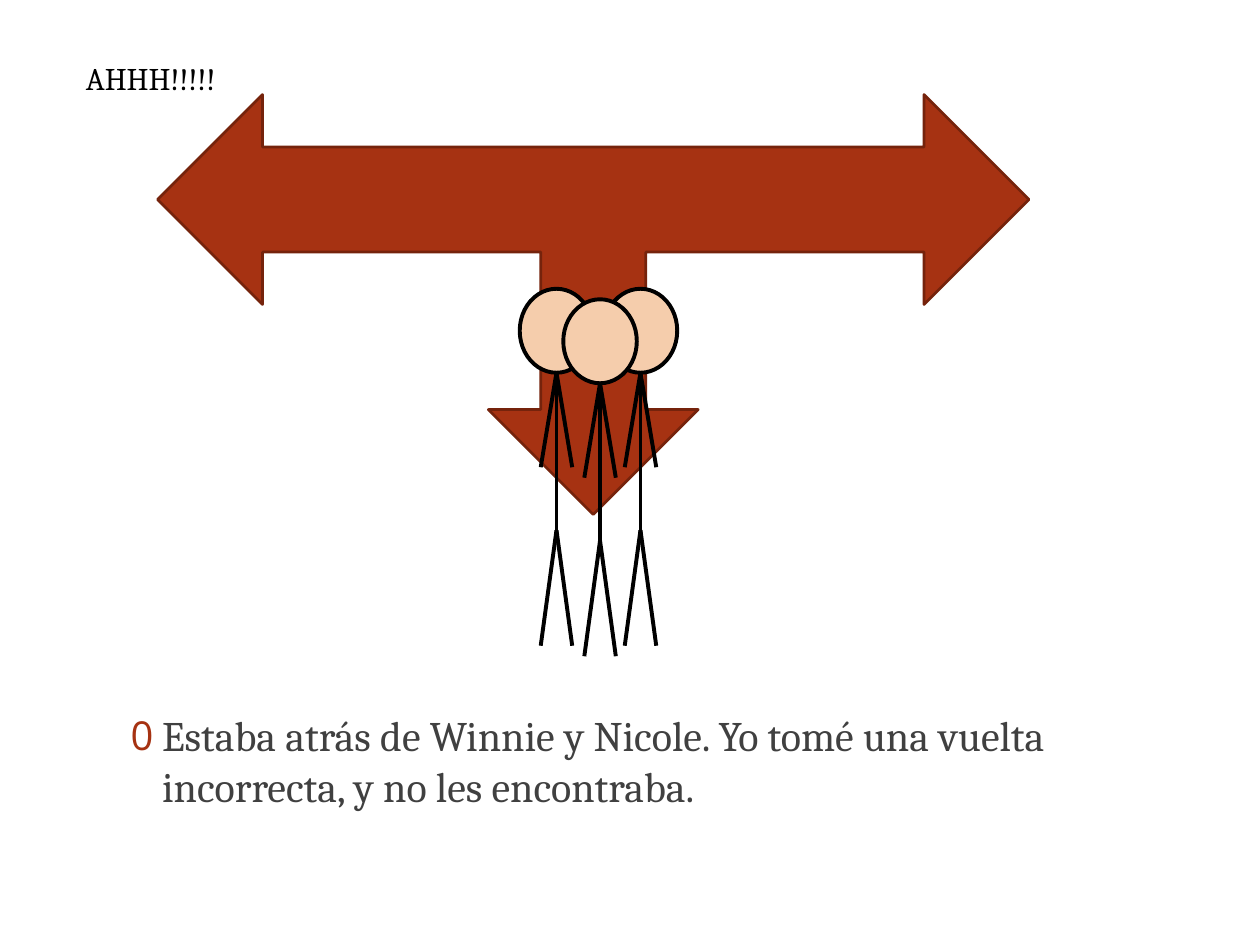
from lxml.etree import SubElement
from pptx import Presentation
from pptx.dml.color import RGBColor
from pptx.enum.shapes import MSO_CONNECTOR as Connector, MSO_SHAPE as Shape
from pptx.enum.text import MSO_AUTO_SIZE as AutoSize, PP_ALIGN as Align
from pptx.oxml.ns import qn
from pptx.util import Inches, Pt

COLORS = {
    "arrow": "A63212",
    "arrow_edge": "75230C",
    "skin": "F5CDAC",
    "ink": "000000",
    "body": "404040",
}
FONT = "Cambria"
BULLET_FONT = "Open Sans"
UNITS_PER_INCH = 24
COLUMNS, ROWS = 240, 180
HEAD_WIDTH, HEAD_HEIGHT = 14, 16
TORSO, ARM_DROP, LEG_DROP, LIMB_SPREAD = 30, 18, 22, 3


def grid(*units):
    return [Inches(unit / UNITS_PER_INCH) for unit in units]


def color(name):
    return RGBColor.from_string(COLORS[name])


def add_filled_shape(shapes, kind, box, fill, edge, width):
    shape = shapes.add_shape(kind, *grid(*box))
    shape.shadow.inherit = False
    shape.fill.solid()
    shape.fill.fore_color.rgb = color(fill)
    shape.line.color.rgb = color(edge)
    shape.line.width = Pt(width)
    return shape


def add_limb(shapes, start, end):
    limb = shapes.add_connector(Connector.STRAIGHT, *grid(*start, *end))
    limb.line.color.rgb = color("ink")
    limb.line.width = Pt(2.25)
    SubElement(limb._element.spPr, qn("a:effectLst"))


def add_stick_figure(shapes, center, top):
    neck = top + HEAD_HEIGHT
    hip = neck + TORSO
    head = (center - HEAD_WIDTH / 2, top, HEAD_WIDTH, HEAD_HEIGHT)
    add_filled_shape(shapes, Shape.OVAL, head, "skin", "ink", 2.25)
    add_limb(shapes, (center, neck), (center, hip))
    for joint, drop in ((neck, ARM_DROP), (hip, LEG_DROP)):
        for side in (-LIMB_SPREAD, LIMB_SPREAD):
            add_limb(shapes, (center, joint), (center + side, joint + drop))


def add_text(shapes, box, text, size, color_name):
    frame = shapes.add_textbox(*grid(*box)).text_frame
    frame.word_wrap = True
    paragraph = frame.paragraphs[0]
    paragraph.text = text
    paragraph.alignment = Align.LEFT
    paragraph.font.name = FONT
    paragraph.font.size = Pt(size)
    paragraph.font.color.rgb = color(color_name)
    return frame


def add_bullet(paragraph, character, color_name, percent, indent):
    properties = paragraph._p.get_or_add_pPr()
    properties.set("marL", str(Inches(indent)))
    properties.set("indent", str(-Inches(indent)))
    bullet_color = SubElement(properties, qn("a:buClr"))
    SubElement(bullet_color, qn("a:srgbClr"), val=COLORS[color_name])
    SubElement(properties, qn("a:buSzPct"), val=str(percent * 1000))
    SubElement(properties, qn("a:buFont"), typeface=BULLET_FONT)
    SubElement(properties, qn("a:buChar"), char=character)
    default_font = properties.find(qn("a:defRPr"))
    if default_font is not None:
        properties.append(default_font)


def main():
    presentation = Presentation()
    presentation.slide_width, presentation.slide_height = grid(COLUMNS, ROWS)
    slide = presentation.slides.add_slide(presentation.slide_layouts[6])
    shapes = slide.shapes

    story = add_text(
        shapes, (22.5, 134, 196, 26.4),
        "Estaba atrás de Winnie y Nicole. Yo tomé una vuelta incorrecta, "
        "y no les encontraba.", 24, "body")
    add_bullet(story.paragraphs[0], "0", "arrow", 95, 0.25)

    crossroads = add_filled_shape(
        shapes, Shape.LEFT_RIGHT_UP_ARROW, (30, 18, 166, 80),
        "arrow", "arrow_edge", 1.5)
    crossroads.rotation = 180

    friends = shapes.add_group_shape().shapes
    for center in (122, 106):
        add_stick_figure(friends, center, 55)
    narrator = shapes.add_group_shape().shapes
    add_stick_figure(narrator, 114.3, 57)

    scream = add_text(shapes, (14, 10, 78, 9.6), "AHHH!!!!!", 18, "ink")
    scream.auto_size = AutoSize.SHAPE_TO_FIT_TEXT

    presentation.save("out.pptx")


if __name__ == "__main__":
    main()
